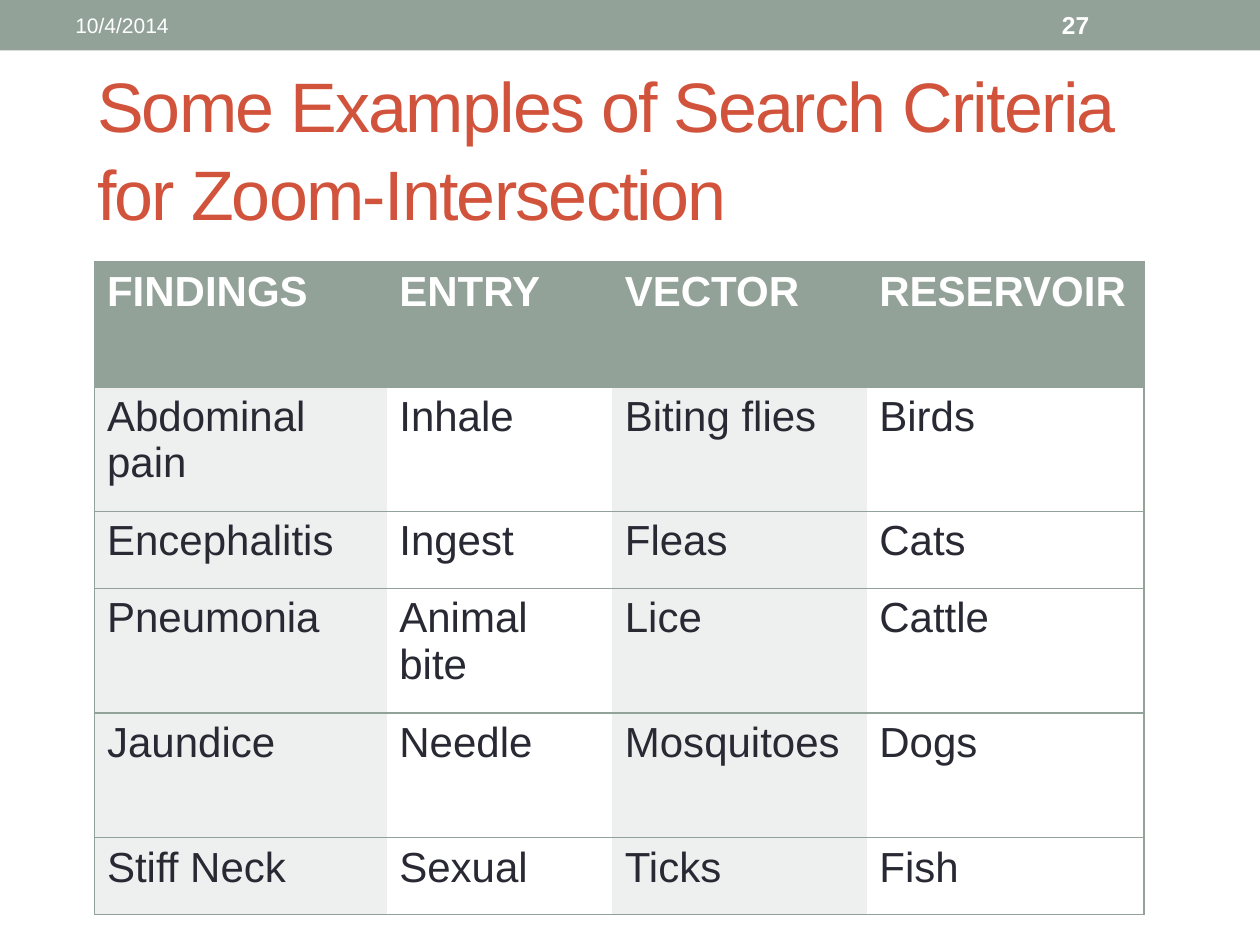
import dataclasses

import lxml.etree
import pptx
import pptx.dml.color
import pptx.enum.shapes
import pptx.enum.text
import pptx.oxml.ns
import pptx.util

Inches = pptx.util.Inches
COLORS = {
    "sage": "93A299",
    "pale": "EEF0EF",
    "white": "FFFFFF",
    "ink": "292934",
    "rust": "D2533C",
}
COLUMN_WIDTHS = [2.32, 1.79, 2.02, 2.2]
ROW_HEIGHTS = [0.99, 0.99, 0.61, 0.99, 0.99, 0.61]
CRITERIA = [
    ["FINDINGS", "ENTRY", "VECTOR", "RESERVOIR"],
    ["Abdominal pain", "Inhale", "Biting flies", "Birds"],
    ["Encephalitis", "Ingest", "Fleas", "Cats"],
    ["Pneumonia", "Animal bite", "Lice", "Cattle"],
    ["Jaundice", "Needle", "Mosquitoes", "Dogs"],
    ["Stiff Neck", "Sexual", "Ticks", "Fish"],
]


@dataclasses.dataclass
class HeaderLabel:
    text: str
    left: float
    width: float
    size: int
    bold: bool


HEADER_LABELS = [
    HeaderLabel("10/4/2014", 0.5, 3.17, 12, False),
    HeaderLabel("27", 8.33, 1.17, 14, True),
]


def rgb(name: str) -> pptx.dml.color.RGBColor:
    return pptx.dml.color.RGBColor.from_string(COLORS[name])


def write_text(text_frame, text: str, *, size: int, color: str,
               bold: bool = False, spacing: float = 0):
    paragraph = text_frame.paragraphs[0]
    paragraph.alignment = pptx.enum.text.PP_ALIGN.LEFT
    run = paragraph.add_run()
    run.text = text
    run.font.name = "Arial"
    run.font.size = pptx.util.Pt(size)
    run.font.bold = bold
    run.font.color.rgb = rgb(color)
    if spacing:
        run.font._element.set("spc", str(round(spacing * 100)))
    return paragraph


def add_band(slide) -> None:
    band = slide.shapes.add_shape(
        pptx.enum.shapes.MSO_SHAPE.RECTANGLE, 0, 0, Inches(10), Inches(0.4))
    band.shadow.inherit = False
    band.fill.solid()
    band.fill.fore_color.rgb = rgb("sage")
    band.line.fill.background()


def format_title(slide, text: str) -> None:
    title = slide.shapes.title
    title.left, title.top = Inches(0.67), Inches(0.33)
    title.width, title.height = Inches(8.92), Inches(1.67)
    title.text_frame.word_wrap = True
    title.text_frame.auto_size = pptx.enum.text.MSO_AUTO_SIZE.NONE
    title.text_frame.vertical_anchor = pptx.enum.text.MSO_ANCHOR.MIDDLE
    paragraph = write_text(title.text_frame, text, size=40, color="rust", spacing=-1)
    paragraph.line_spacing = 1.04


def add_header_label(slide, label: HeaderLabel) -> None:
    box = slide.shapes.add_textbox(
        Inches(label.left), Inches(0.02), Inches(label.width), Inches(0.36))
    box.text_frame.word_wrap = True
    box.text_frame.vertical_anchor = pptx.enum.text.MSO_ANCHOR.MIDDLE
    write_text(box.text_frame, label.text, size=label.size, color="white", bold=label.bold)


def set_borders(cell, visible_sides: str) -> None:
    properties = cell._tc.get_or_add_tcPr()
    qualified = pptx.oxml.ns.qn
    for side in "LRTB":
        line = lxml.etree.SubElement(properties, qualified(f"a:ln{side}"), w="12700")
        if side in visible_sides:
            fill = lxml.etree.SubElement(line, qualified("a:solidFill"))
            lxml.etree.SubElement(fill, qualified("a:srgbClr"), val=COLORS["sage"])
        else:
            lxml.etree.SubElement(line, qualified("a:noFill"))


def add_criteria_table(slide) -> None:
    table = slide.shapes.add_table(
        len(CRITERIA), len(COLUMN_WIDTHS), Inches(0.75), Inches(2.08),
        Inches(sum(COLUMN_WIDTHS)), Inches(sum(ROW_HEIGHTS))).table
    table.horz_banding = False
    for column, width in zip(table.columns, COLUMN_WIDTHS):
        column.width = Inches(width)
    last_column = len(COLUMN_WIDTHS) - 1
    for row_index, (height, words) in enumerate(zip(ROW_HEIGHTS, CRITERIA)):
        table.rows[row_index].height = Inches(height)
        is_header = row_index == 0
        for column_index, word in enumerate(words):
            cell = table.cell(row_index, column_index)
            outer_side = {0: "L", last_column: "R"}.get(column_index, "")
            set_borders(cell, "TB" + outer_side)
            body_fill = "white" if column_index % 2 else "pale"
            cell.fill.solid()
            cell.fill.fore_color.rgb = rgb("sage" if is_header else body_fill)
            write_text(cell.text_frame, word, size=24, bold=is_header,
                       color="white" if is_header else "ink")


def main() -> None:
    presentation = pptx.Presentation()
    presentation.slide_width = Inches(10)
    presentation.slide_height = Inches(7.5)
    slide = presentation.slides.add_slide(presentation.slide_layouts[5])
    add_band(slide)
    format_title(slide, "Some Examples of Search Criteria for Zoom-Intersection")
    add_criteria_table(slide)
    for label in HEADER_LABELS:
        add_header_label(slide, label)
    presentation.save("out.pptx")


if __name__ == "__main__":
    main()
